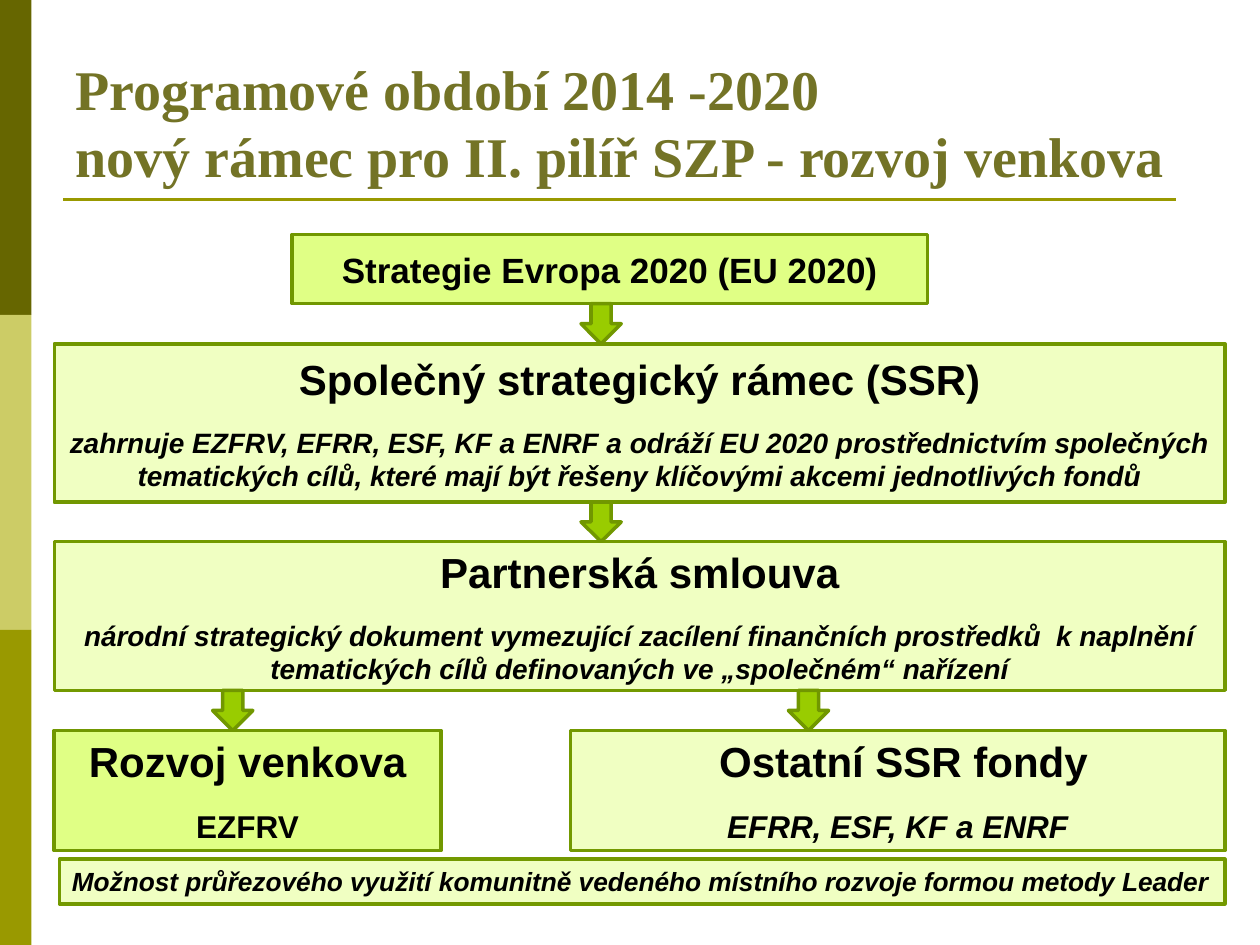
from dataclasses import dataclass

from pptx import Presentation
from pptx.dml.color import RGBColor
from pptx.enum.shapes import MSO_CONNECTOR as Connector, MSO_SHAPE as Preset
from pptx.enum.text import MSO_ANCHOR as Anchor, PP_ALIGN as Align
from pptx.oxml.xmlchemy import OxmlElement
from pptx.util import Pt


@dataclass(frozen=True)
class Theme:
    """Colours, fonts and type sizes of the slide."""
    title: str = "737326"
    text: str = "000000"
    rule: str = "999900"
    bands: tuple = ("666600", "CCCC66", "999900")
    strong: str = "E0FF85"
    pale: str = "F0FFC2"
    arrow: str = "99CC00"
    outline: str = "719700"
    pale_outline: str = "739900"
    title_font: str = "Times New Roman"
    body_font: str = "Arial"
    title_size: int = 32
    heading: int = 24
    strategy: int = 20
    fund: int = 18
    detail: int = 16
    note: int = 15


THEME = Theme()
WIDTH, HEIGHT = 720, 540
LEFT, RIGHT = 31, 700
BAND_WIDTH = 18
ARROW_WIDTH = 23
TITLE = ["Programové období 2014 -2020", "nový rámec pro II. pilíř SZP - rozvoj venkova"]

BOXES = [
    ((167, 134, 363, 39.5), THEME.strong, THEME.outline, [
        ("Strategie Evropa 2020 (EU 2020)", THEME.strategy, False)]),
    ((LEFT, 196.5, RIGHT - LEFT, 90.5), THEME.pale, THEME.outline, [
        ("Společný strategický rámec (SSR)", THEME.heading, False),
        ("zahrnuje EZFRV, EFRR, ESF, KF a ENRF a odráží EU 2020 prostřednictvím společných "
         "tematických cílů, které mají být řešeny klíčovými akcemi jednotlivých fondů",
         THEME.detail, True)]),
    ((LEFT, 309.5, RIGHT - LEFT, 85), THEME.pale, THEME.pale_outline, [
        ("Partnerská smlouva", THEME.heading, False),
        ("národní strategický dokument vymezující zacílení finančních prostředků  k naplnění "
         "tematických cílů definovaných ve „společném“ nařízení", THEME.detail, True)]),
    ((LEFT, 417.5, 221, 68.5), THEME.strong, THEME.outline, [
        ("Rozvoj venkova", THEME.heading, False),
        ("EZFRV", THEME.fund, False)]),
    ((326, 417.5, RIGHT - 326, 68.5), THEME.pale, THEME.pale_outline, [
        (" Ostatní SSR fondy", THEME.heading, False),
        ("EFRR, ESF, KF a ENRF", THEME.fund, True)]),
]
NOTE = ((34, 491, RIGHT - 34, 25.5), THEME.pale, THEME.pale_outline, [
    ("Možnost průřezového využití komunitně vedeného místního rozvoje formou metody Leader",
     THEME.note, True)])
ARROWS = [(0, 1, 343.5), (1, 2, 343.5), (2, 3, 133), (2, 4, 462)]


def color(value):
    return RGBColor.from_string(value)


def add_run(paragraph, text, font, size, ink, italic=False):
    run = paragraph.add_run()
    run.text = text
    run.font.name = font
    run.font.size = Pt(size)
    run.font.bold = True
    run.font.italic = italic
    run.font.color.rgb = color(ink)


def add_block(slide, preset, frame, fill, outline=None):
    shape = slide.shapes.add_shape(preset, *map(Pt, frame))
    shape.shadow.inherit = False
    shape.fill.solid()
    shape.fill.fore_color.rgb = color(fill)
    if outline:
        shape.line.color.rgb = color(outline)
        shape.line.width = Pt(2)
    else:
        shape.line.fill.background()
    return shape


def add_box(slide, box, anchor=Anchor.MIDDLE, align=Align.CENTER):
    frame, fill, outline, lines = box
    text_frame = add_block(slide, Preset.RECTANGLE, frame, fill, outline).text_frame
    text_frame.word_wrap = True
    text_frame.vertical_anchor = anchor
    for index, (text, size, italic) in enumerate(lines):
        paragraph = text_frame.add_paragraph() if index else text_frame.paragraphs[0]
        paragraph.alignment = align
        paragraph.space_before = Pt(12)
        add_run(paragraph, text, THEME.body_font, size, THEME.text, italic)


def add_title(slide):
    text_frame = slide.shapes.add_textbox(*map(Pt, (36, 21.6, 648, 90))).text_frame
    text_frame.word_wrap = True
    text_frame.vertical_anchor = Anchor.BOTTOM
    paragraph = text_frame.paragraphs[0]
    for index, line in enumerate(TITLE):
        if index:
            paragraph.add_line_break()
        add_run(paragraph, line, THEME.title_font, THEME.title_size, THEME.title)


def add_rule(slide):
    rule = slide.shapes.add_connector(Connector.STRAIGHT, *map(Pt, (36, 114, 672, 114)))
    rule.line.color.rgb = color(THEME.rule)
    rule.line.width = Pt(1.5)
    rule._element.spPr.append(OxmlElement("a:effectLst"))


def main():
    """Build the rural development framework slide."""
    presentation = Presentation()
    presentation.slide_width, presentation.slide_height = Pt(WIDTH), Pt(HEIGHT)
    slide = presentation.slides.add_slide(presentation.slide_layouts[6])
    band_height = HEIGHT / len(THEME.bands)
    for index, fill in enumerate(THEME.bands):
        add_block(slide, Preset.RECTANGLE, (0, index * band_height, BAND_WIDTH, band_height), fill)
    add_rule(slide)
    add_title(slide)
    for box in BOXES:
        add_box(slide, box)
    for source, target, center in ARROWS:
        _, top, _, height = BOXES[source][0]
        start, end = top + height, BOXES[target][0][1]
        frame = (center - ARROW_WIDTH / 2, start, ARROW_WIDTH, end - start)
        add_block(slide, Preset.DOWN_ARROW, frame, THEME.arrow, THEME.outline)
    add_box(slide, NOTE, Anchor.TOP, Align.JUSTIFY)
    presentation.save("out.pptx")


if __name__ == "__main__":
    main()
